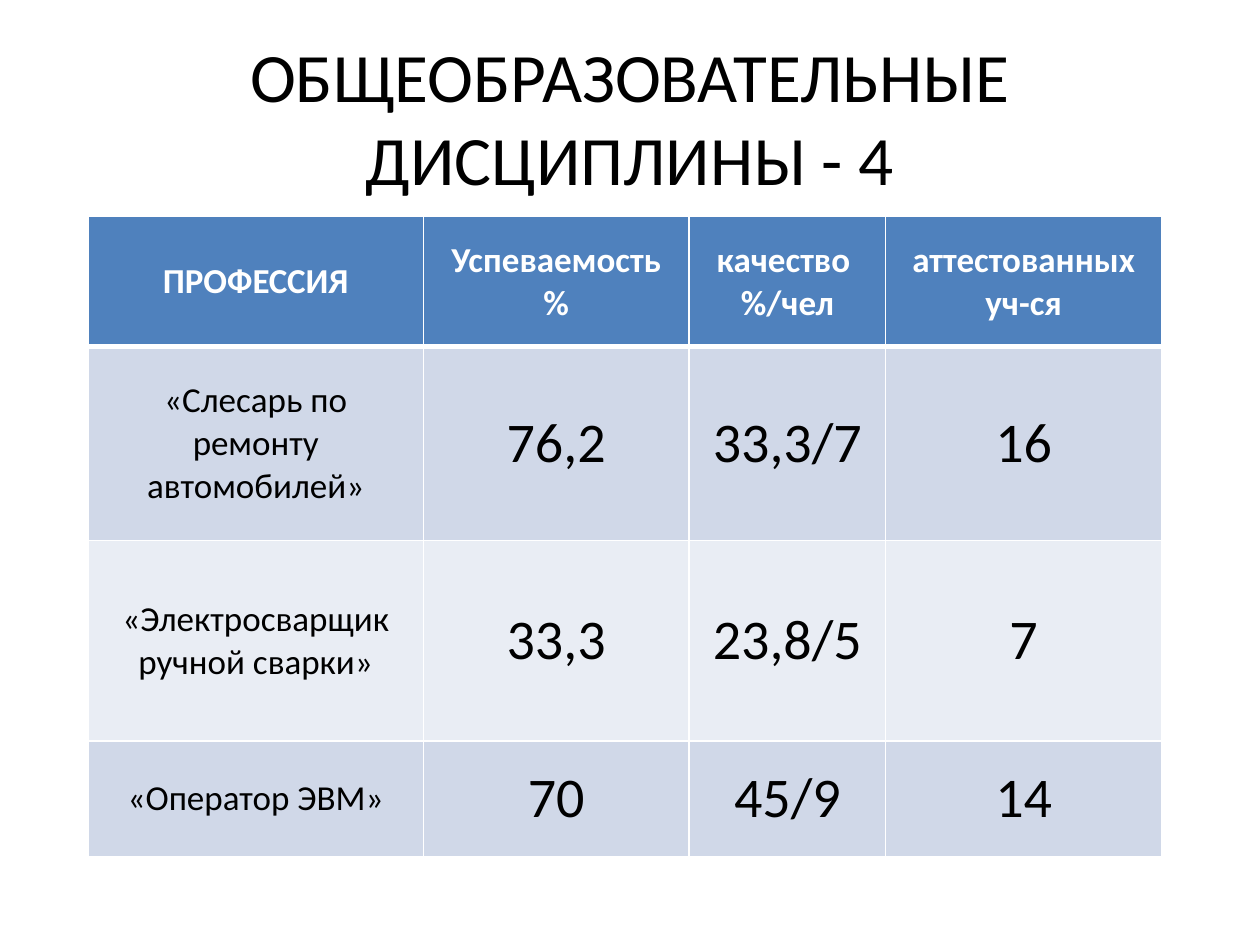
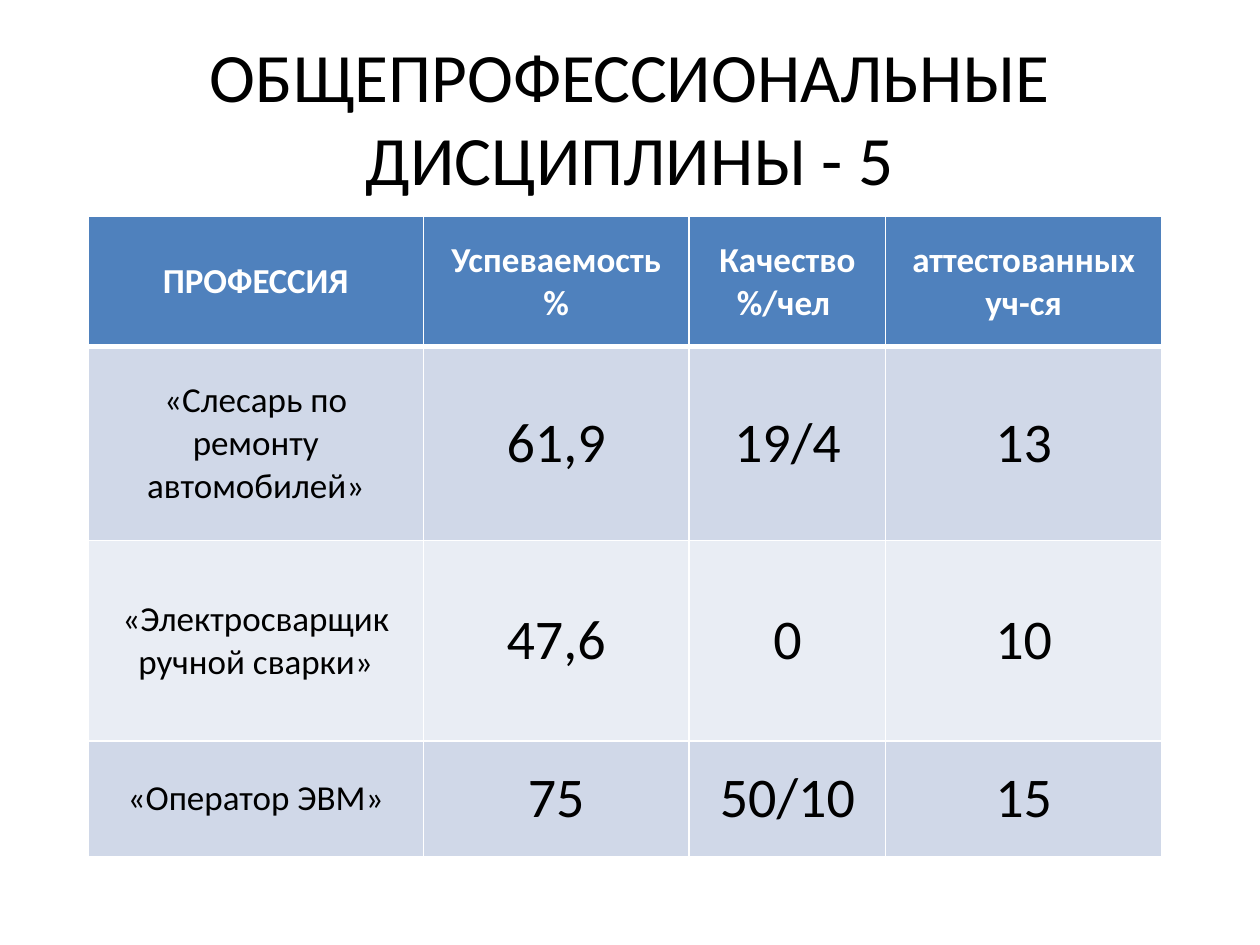
from dataclasses import dataclass

from lxml import etree
from pptx import Presentation, util as u
from pptx.dml.color import RGBColor
from pptx.enum import text as t
from pptx.oxml.ns import qn

# Shared look
FONT = "Calibri"
BLACK, WHITE, BLUE = "000000", "FFFFFF", "4F81BD"
BANDS = ("D0D8E8", "E9EDF4")
COLS = (2.66, 2.11, 1.56, 2.19)
ROWS = (1.03, 1.54, 1.59, 0.92)
JOBS = ("«Слесарь по ремонту автомобилей»",
        "«Электросварщик ручной сварки»",
        "«Оператор ЭВМ»")


@dataclass
class Report:
    title: str
    quality: str
    marks: tuple[tuple[str, str, str], ...]


REPORTS = (
    Report("ОБЩЕОБРАЗОВАТЕЛЬНЫЕ ДИСЦИПЛИНЫ - 4", "качество \n%/чел",
           (("76,2", "33,3/7", "16"), ("33,3", "23,8/5", "7"),
            ("70", "45/9", "14"))),
    Report("ОБЩЕПРОФЕССИОНАЛЬНЫЕ ДИСЦИПЛИНЫ - 5", "Качество\n%/чел ",
           (("61,9", "19/4", "13"), ("47,6", "0", "10"),
            ("75", "50/10", "15"))),
)


def color(code: str) -> RGBColor:
    return RGBColor.from_string(code)


def write(frame, words: str, *, size: float, ink: str = BLACK,
          bold: bool = False) -> None:
    """Fill a text frame with centred paragraphs, one for each line."""
    frame.word_wrap = True
    frame.text = words
    for para in frame.paragraphs:
        para.alignment = t.PP_ALIGN.CENTER
        for run in para.runs:
            font = run.font
            font.name, font.size, font.bold = FONT, u.Pt(size), bold
            font.color.rgb = color(ink)


def edge(cell, top: float, base: float) -> None:
    """Draw white cell borders; they must come before the fill."""
    props = cell._tc.get_or_add_tcPr()
    sides = (("lnL", 1), ("lnR", 1), ("lnT", top), ("lnB", base))
    for spot, (side, width) in enumerate(sides):
        line = etree.Element(qn(f"a:{side}"), w=str(u.Pt(width)))
        fill = etree.SubElement(line, qn("a:solidFill"))
        etree.SubElement(fill, qn("a:srgbClr"), val=WHITE)
        props.insert(spot, line)


def add_title(slide, words: str) -> None:
    box = slide.shapes.add_textbox(u.Inches(0.5), u.Inches(0.3),
                                   u.Inches(9), u.Inches(1.25))
    box.text_frame.vertical_anchor = t.MSO_ANCHOR.MIDDLE
    write(box.text_frame, words, size=39.6)


def add_grid(slide, report: Report) -> None:
    head = ("ПРОФЕССИЯ", "Успеваемость\n%", report.quality,
            "аттестованных уч-ся")
    body = [(job, *marks) for job, marks in zip(JOBS, report.marks)]
    grid = slide.shapes.add_table(
        len(ROWS), len(COLS), u.Inches(0.7), u.Inches(1.72),
        u.Inches(sum(COLS)), u.Inches(sum(ROWS))).table
    for col, width in zip(grid.columns, COLS):
        col.width = u.Inches(width)
    for row, height in zip(grid.rows, ROWS):
        row.height = u.Inches(height)

    for r, line in enumerate([head, *body]):
        top = r == 0
        for c, words in enumerate(line):
            cell = grid.cell(r, c)
            cell.vertical_anchor = t.MSO_ANCHOR.MIDDLE
            cell.fill.solid()
            cell.fill.fore_color.rgb = color(BLUE if top else BANDS[(r - 1) % 2])
            edge(cell, top=3 if r == 1 else 1, base=3 if top else 1)
            write(cell.text_frame, words, size=20 if top or c == 0 else 32,
                  ink=WHITE if top else BLACK, bold=top)


def main() -> None:
    deck = Presentation()
    deck.slide_width, deck.slide_height = u.Inches(10), u.Inches(7.5)
    for report in REPORTS:
        slide = deck.slides.add_slide(deck.slide_layouts[6])
        add_title(slide, report.title)
        add_grid(slide, report)
    deck.save("out.pptx")


if __name__ == "__main__":
    main()
